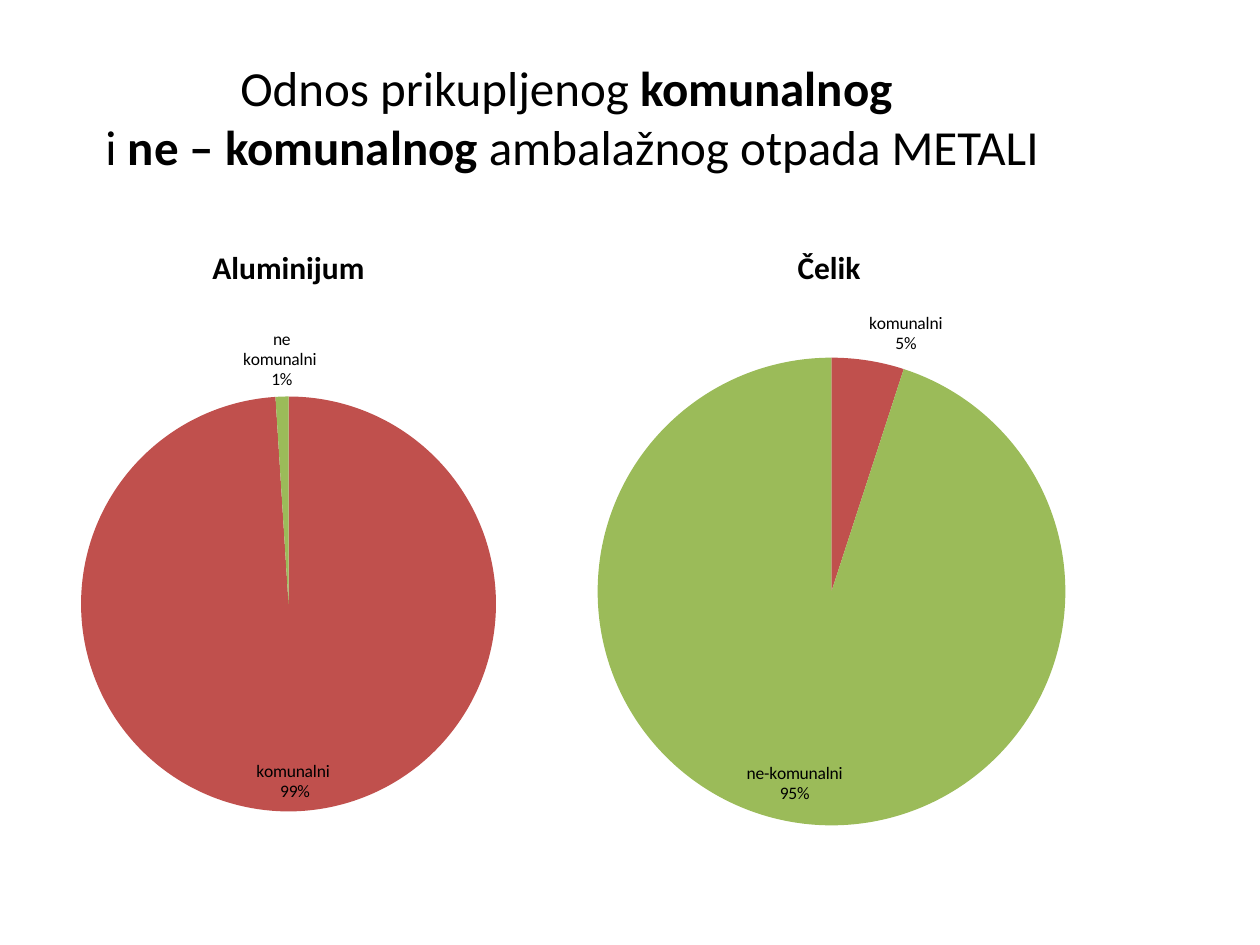
import dataclasses
import pptx
import pptx.chart.data
import pptx.dml.color
import pptx.enum.chart
import pptx.enum.text
import pptx.oxml
import pptx.oxml.ns
import pptx.util

UNIT = 9144
FONT = "Calibri"
BLACK = "000000"
FILLS = ("4F81BD", "C0504D", "9BBB59")


@dataclasses.dataclass
class Box:
    left: int
    top: int
    width: int
    height: int

    def size(self) -> tuple:
        return tuple(px(n) for n in dataclasses.astuple(self))


@dataclasses.dataclass
class Pie:
    name: str
    kinds: tuple
    values: tuple
    box: Box
    plot: tuple


PIES = (
    Pie("Aluminijum", ("komunalni ", "ne komunalni "), (99, 1),
        Box(50, 175, 358, 495), (0.04, 0.28, 0.92, 0.67)),
    Pie("Čelik", ("komunalni", "ne-komunalni"), (5, 95),
        Box(458, 175, 400, 495), (0.04, 0.22, 0.93, 0.75)),
)
TITLE = (
    (("Odnos prikupljenog ", False), ("komunalnog ", True)),
    (("i ", False), ("ne – komunalnog ", True),
     ("ambalažnog otpada METALI", False)),
)


def px(count: int) -> pptx.util.Emu:
    return pptx.util.Emu(count * UNIT)


def color(code: str) -> pptx.dml.color.RGBColor:
    return pptx.dml.color.RGBColor.from_string(code)


def style(font, size: int) -> None:
    font.name = FONT
    font.size = pptx.util.Pt(size)
    font.color.rgb = color(BLACK)


def node(xml: str):
    space = pptx.oxml.ns.nsdecls("c")
    return pptx.oxml.parse_xml(xml.replace(">", f" {space}>", 1))


def place(chart, plot: tuple) -> None:
    area = chart.plots[0]._element.getparent()
    for old in area.findall(pptx.oxml.ns.qn("c:layout")):
        area.remove(old)
    sides = "".join(f'<c:{key} val="{val}"/>' for key, val in zip("xywh", plot))
    area.insert(0, node(
        '<c:layout><c:manualLayout><c:layoutTarget val="inner"/>'
        '<c:xMode val="edge"/><c:yMode val="edge"/>'
        f"{sides}</c:manualLayout></c:layout>"))


def draw_title(shape, box: Box) -> None:
    shape.left, shape.top, shape.width, shape.height = box.size()
    frame = shape.text_frame
    frame.word_wrap = True
    frame.vertical_anchor = pptx.enum.text.MSO_ANCHOR.MIDDLE
    para = frame.paragraphs[0]
    para.alignment = pptx.enum.text.PP_ALIGN.CENTER
    style(para.font, 28)
    for row, line in enumerate(TITLE):
        if row:
            para.add_line_break()
        for text, bold in line:
            run = para.add_run()
            run.text = text
            run.font.bold = bold


def draw_pie(slide, pie: Pie) -> None:
    data = pptx.chart.data.CategoryChartData()
    data.categories = (pie.name, *pie.kinds)
    data.add_series("Series 1", (None, *pie.values))
    chart = slide.shapes.add_chart(
        pptx.enum.chart.XL_CHART_TYPE.PIE, *pie.box.size(), data).chart
    style(chart.font, 10)
    chart.has_legend = False
    chart.has_title = True
    para = chart.chart_title.text_frame.paragraphs[0]
    para.text = pie.name
    style(para.font, 18)
    para.font.bold = True
    chart.plots[0].vary_by_categories = True
    series = chart.plots[0].series[0]
    for index, code in enumerate(FILLS):
        fill = series.points[index].format.fill
        fill.solid()
        fill.fore_color.rgb = color(code)
    labels = series.data_labels
    style(labels.font, 10)
    labels.show_category_name = True
    labels.show_percentage = True
    labels.show_value = False
    labels.position = pptx.enum.chart.XL_LABEL_POSITION.BEST_FIT
    root = labels._element
    root.insert(0, node('<c:dLbl><c:idx val="0"/><c:delete val="1"/></c:dLbl>'))
    last = root.find(pptx.oxml.ns.qn("c:showBubbleSize"))
    last.addnext(node("<c:separator>\n</c:separator>"))
    place(chart, pie.plot)


def main() -> None:
    deck = pptx.Presentation()
    deck.slide_width, deck.slide_height = px(1000), px(750)
    slide = deck.slides.add_slide(deck.slide_layouts[5])
    draw_title(slide.shapes.title, Box(50, 30, 808, 125))
    for pie in PIES:
        draw_pie(slide, pie)
    deck.save("out.pptx")


if __name__ == "__main__":
    main()
